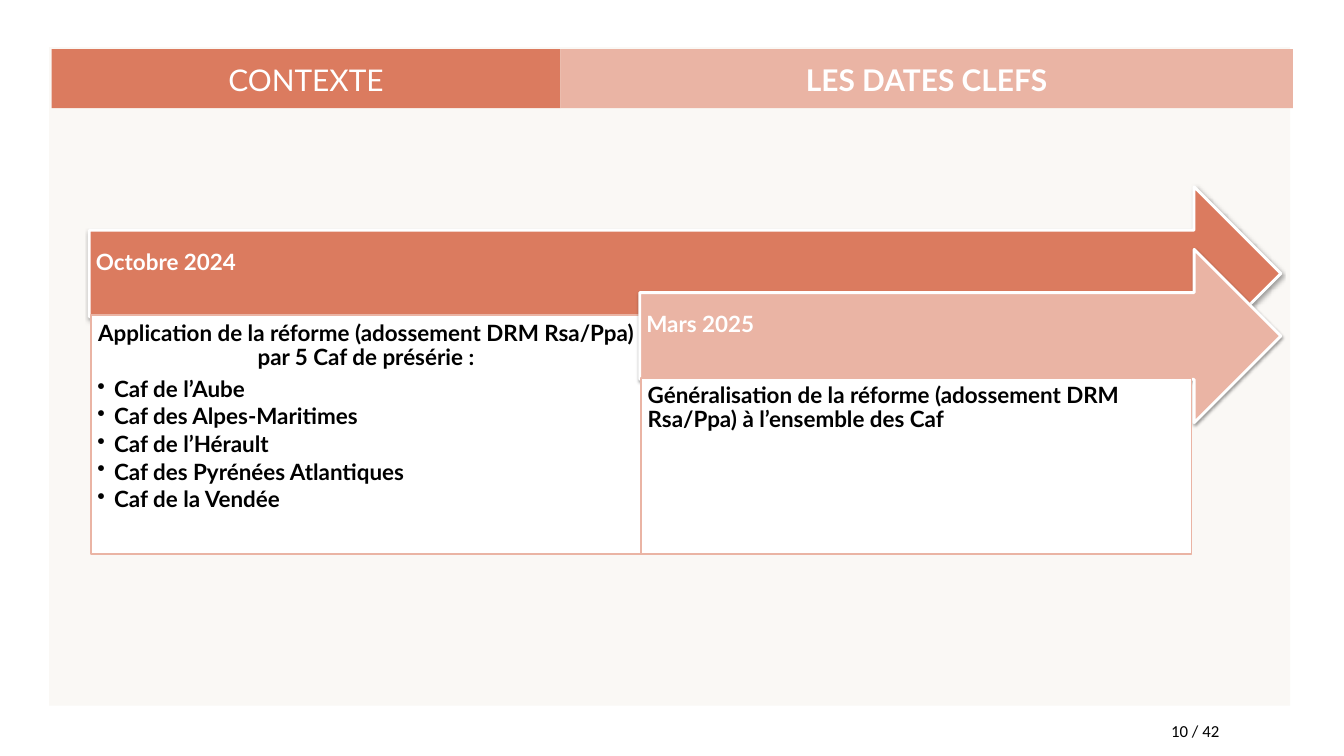
from dataclasses import dataclass

from lxml.etree import SubElement
from pptx import Presentation
from pptx.dml.color import RGBColor
from pptx.enum.shapes import MSO_SHAPE as Preset
from pptx.enum.text import MSO_ANCHOR as Anchor, PP_ALIGN as Align
from pptx.oxml.ns import qn
from pptx.util import Inches, Pt


@dataclass(frozen=True)
class Theme:
    coral: str = "DB7B5F"
    blush: str = "EAB4A4"
    paper: str = "FAF8F5"
    white: str = "FFFFFF"
    black: str = "000000"
    font: str = "Lato"
    number_font: str = "Calibri"
    title: int = 32
    body: int = 24
    number: int = 18


THEME = Theme()
PANEL_INSETS = (0.1, 0.1, 0.1, 0.1)
ARROW_INSETS = (0.1, 0.1, 0.28, 0.41)
BANNER_INSETS = (0, 0.04, 0, 0)


def set_values(target, values):
    for name, value in values.items():
        setattr(target, name, value)


class SlideBuilder:
    def __init__(self, page, theme):
        self.page = page
        self.theme = theme

    def shape(self, preset, place, fill, line=None, width=0):
        box = self.page.shapes.add_shape(preset, *map(Inches, place))
        box.shadow.inherit = False
        box.fill.solid()
        box.fill.fore_color.rgb = RGBColor.from_string(fill)
        if line:
            box.line.color.rgb = RGBColor.from_string(line)
            box.line.width = Pt(width)
        else:
            box.line.fill.background()
        return box

    def frame(self, box, insets, anchor=Anchor.TOP):
        left, top, right, bottom = map(Inches, insets)
        set_values(box.text_frame, {
            "word_wrap": True, "vertical_anchor": anchor,
            "margin_left": left, "margin_top": top,
            "margin_right": right, "margin_bottom": bottom,
        })

    def text(self, para, text, size, color, bold=False, font=None, **layout):
        span = para.add_run()
        span.text = text
        set_values(para, {"alignment": Align.LEFT, **layout})
        set_values(span.font, {"name": font or self.theme.font,
                               "size": Pt(size), "bold": bold})
        span.font.color.rgb = RGBColor.from_string(color)

    def body(self, para, text, color, after=0.35, **layout):
        """Add a bold line whose space after is a share of its type size."""
        size = self.theme.body
        self.text(para, text, size, color, bold=True, line_spacing=0.9,
                  space_after=Pt(size * after), **layout)

    def bullet(self, para, text):
        props = para._p.get_or_add_pPr()
        props.set("marL", str(Inches(0.25)))
        props.set("indent", str(Inches(-0.25)))
        SubElement(props, qn("a:buChar"), char="•")
        self.body(para, text, self.theme.black, after=0.15)

    def banner(self, place, fill, text, bold=False):
        box = self.shape(Preset.RECTANGLE, place, fill)
        self.frame(box, BANNER_INSETS, Anchor.MIDDLE)
        self.text(box.text_frame.paragraphs[0], text, self.theme.title,
                  self.theme.white, bold, alignment=Align.CENTER)

    def soft_shadow(self, box):
        effects = box._element.spPr.find(qn("a:effectLst"))
        shadow = SubElement(effects, qn("a:outerShdw"), blurRad="40000",
                            dist="20000", dir="5400000", rotWithShape="0")
        color = SubElement(shadow, qn("a:srgbClr"), val=self.theme.black)
        SubElement(color, qn("a:alpha"), val="38000")

    def arrow(self, place, fill, date):
        box = self.shape(Preset.RIGHT_ARROW, place, fill, self.theme.white, 3)
        self.soft_shadow(box)
        self.frame(box, ARROW_INSETS, Anchor.MIDDLE)
        self.body(box.text_frame.paragraphs[0], date, self.theme.white)

    def panel(self, place, heading, alignment, items=()):
        box = self.shape(Preset.RECTANGLE, place, self.theme.white,
                         self.theme.blush, 2)
        self.frame(box, PANEL_INSETS)
        self.body(box.text_frame.paragraphs[0], heading, self.theme.black,
                  alignment=alignment)
        for item in items:
            self.bullet(box.text_frame.add_paragraph(), item)

    def page_number(self, place, text):
        box = self.page.shapes.add_textbox(*map(Inches, place))
        box.text_frame.word_wrap = True
        self.text(box.text_frame.paragraphs[0], text, self.theme.number,
                  self.theme.black, font=self.theme.number_font)


def main():
    deck = Presentation()
    set_values(deck, {"slide_width": Inches(20), "slide_height": Inches(11.25)})
    page = deck.slides.add_slide(deck.slide_layouts[6])
    builder = SlideBuilder(page, THEME)

    builder.shape(Preset.RECTANGLE, (0.73, 0.7, 18.47, 9.8), THEME.paper)
    builder.banner((0.77, 0.73, 7.57, 0.88), THEME.coral, "CONTEXTE")
    builder.banner((8.34, 0.73, 10.9, 0.88), THEME.blush, "LES DATES CLEFS",
                   bold=True)
    builder.page_number((17.33, 10.68, 1.19, 0.42), "10 / 42")

    steps = [
        (1.33, 2.78, THEME.coral, "Octobre 2024",
         "Application de la réforme (adossement DRM Rsa/Ppa) "
         "par 5 Caf de présérie :", Align.CENTER,
         ["Caf de l’Aube", "Caf des Alpes-Maritimes", "Caf de l’Hérault",
          "Caf des Pyrénées Atlantiques", "Caf de la Vendée"]),
        (9.52, 3.71, THEME.blush, "Mars 2025",
         "Généralisation de la réforme (adossement DRM Rsa/Ppa) "
         "à l’ensemble des Caf", Align.LEFT, []),
    ]
    arrow_tip, panel_bottom = 19.06, 8.25
    for left, top, fill, date, heading, alignment, items in steps:
        builder.arrow((left, top, arrow_tip - left, 2.58), fill, date)
        panel_top = top + 1.91
        builder.panel((left + 0.02, panel_top, 8.19, panel_bottom - panel_top),
                      heading, alignment, items)

    deck.save("out.pptx")


if __name__ == "__main__":
    main()
